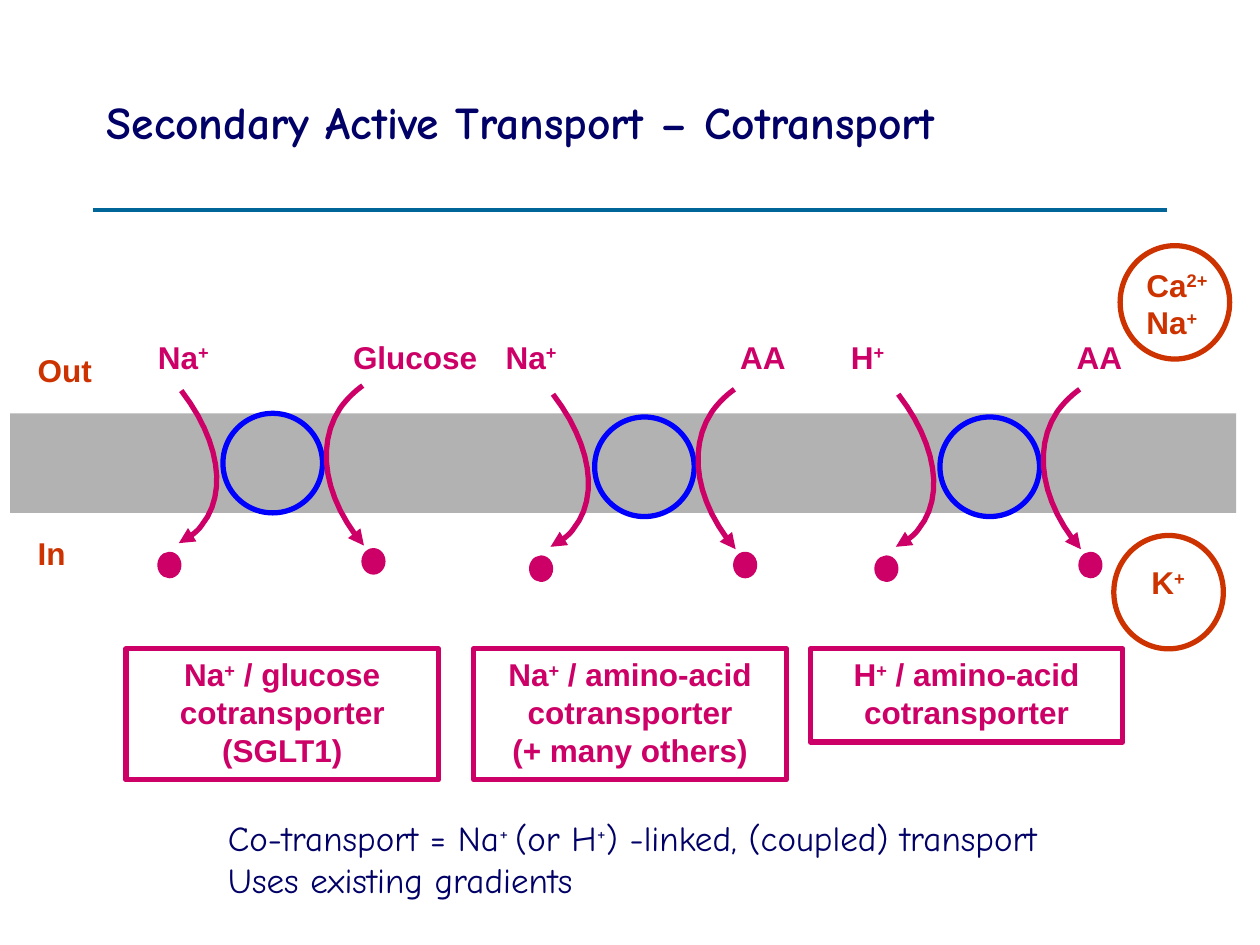
import pptx
import pptx.util
import pptx.dml.color
import pptx.enum.shapes
import pptx.enum.text
import pptx.oxml
import pptx.oxml.ns

Pt = pptx.util.Pt
RGBColor = pptx.dml.color.RGBColor
SHAPE = pptx.enum.shapes.MSO_SHAPE
ALIGN = pptx.enum.text.PP_ALIGN
ANCHOR = pptx.enum.text.MSO_ANCHOR

NAVY = RGBColor(0x00, 0x00, 0x66)
TEAL = RGBColor(0x00, 0x66, 0x99)
GREY = RGBColor(0xB2, 0xB2, 0xB2)
BLUE = RGBColor(0x00, 0x00, 0xFF)
PINK = RGBColor(0xCC, 0x00, 0x66)
RUST = RGBColor(0xCC, 0x33, 0x00)

TITLE = "Secondary Active Transport – Cotransport"
SUMMARY = ["Co-transport = Na|+ |(or H|+|) -linked, (coupled) transport",
           "Uses existing gradients"]
SIDES = [("Out", 197.3), ("In", 301.7)]
TRANSPORTERS = [
    {"ion": "Na|+|", "solute": "Glucose", "caption": ["Na|+| / glucose cotransporter (SGLT1)"],
     "left": 72, "height": 74.9, "carrier": (127.4, 236.2)},
    {"ion": "Na|+|", "solute": "AA", "caption": ["Na|+| / amino-acid cotransporter", "(+ many others)"],
     "left": 270.7, "height": 74.9, "carrier": (339.8, 238.3)},
    {"ion": "H|+|", "solute": "AA", "caption": ["H|+| / amino-acid cotransporter"],
     "left": 463, "height": 53.3, "carrier": (537.1, 238.3)},
]
GRADIENTS = [
    {"ions": ["Ca|2+|", "Na|+|"], "text": (648, 148.3, 56.2, 50.4),
     "ring": (640.1, 140.4), "align": ALIGN.LEFT},
    {"ions": ["K|+|"], "text": (639.4, 318.2, 56.2, 28.8),
     "ring": (636.5, 306), "align": ALIGN.CENTER},
]
CARRIER_SIZE = 56.9
ION_PATH = [(-23.8, -13), (-2.2, 15.1), (2.9, 45.4), (-12.2, 64.1),
            (-15.1, 68.4), (-20.2, 71.3), (-25.2, 74.2)]
SOLUTE_PATH = [(79.9, -15.8), (74.9, -12.2), (70.6, -7.9), (67, -2.9),
               (52.6, 18.7), (58.3, 49.7), (80.6, 75.6)]
DOTS = [(-36, 80.6), (80.6, 78.5)]
CURVE_STEPS = 12


def write(shape, lines, color, size=18, face="Arial", bold=True,
          align=ALIGN.LEFT, anchor=ANCHOR.TOP):
    frame = shape.text_frame
    frame.word_wrap = True
    frame.vertical_anchor = anchor
    for index, line in enumerate(lines):
        para = frame.paragraphs[0] if index == 0 else frame.add_paragraph()
        para.alignment = align
        para.font.name, para.font.size = face, Pt(size)
        para.font.bold, para.font.color.rgb = bold, color
        for position, piece in enumerate(line.split("|")):
            if piece:
                span = para.add_run()
                span.text = piece
                if position % 2:
                    span._r.get_or_add_rPr().set("baseline", "30000")


def add_text(page, place, lines, color, **style):
    box = page.shapes.add_textbox(*map(Pt, place))
    write(box, lines, color, **style)


def paint(shape, fill=None, line=None):
    shape.shadow.inherit = False
    if fill is None:
        shape.fill.background()
    else:
        shape.fill.solid()
        shape.fill.fore_color.rgb = fill
    if line is None:
        shape.line.fill.background()
    else:
        shape.line.color.rgb = line
        shape.line.width = Pt(3)


def add_shape(page, kind, place, fill=None, line=None):
    shape = page.shapes.add_shape(kind, *map(Pt, place))
    paint(shape, fill, line)
    return shape


def bezier(p0, p1, p2, p3, t):
    s = 1 - t
    return tuple(s**3 * a + 3 * s * s * t * b + 3 * s * t * t * c + t**3 * d
                 for a, b, c, d in zip(p0, p1, p2, p3))


def add_arrow(page, origin, path):
    points = [path[0]]
    for start in range(0, len(path) - 1, 3):
        points += [bezier(*path[start:start + 4], step / CURVE_STEPS)
                   for step in range(1, CURVE_STEPS + 1)]
    points = [(Pt(origin[0] + x), Pt(origin[1] + y)) for x, y in points]
    builder = page.shapes.build_freeform(*points[0])
    builder.add_line_segments(points[1:], close=False)
    arrow = builder.convert_to_shape()
    paint(arrow, line=PINK)
    arrow.line._get_or_add_ln().append(pptx.oxml.parse_xml(
        '<a:tailEnd %s type="triangle"/>' % pptx.oxml.ns.nsdecls("a")))


def add_transporter(page, item):
    left, (x, y) = item["left"], item["carrier"]
    caption = add_shape(page, SHAPE.RECTANGLE, (left, 370.8, 178.6, item["height"]), line=PINK)
    write(caption, item["caption"], PINK, align=ALIGN.CENTER)
    add_text(page, (left + 6.5, 189.4, 52.6, 28.8), [item["ion"]], PINK, align=ALIGN.CENTER)
    add_text(page, (left + 100.1, 189.4, 130.3, 28.8), [item["solute"]], PINK, align=ALIGN.CENTER)
    add_shape(page, SHAPE.OVAL, (x, y, CARRIER_SIZE, CARRIER_SIZE), GREY, BLUE)
    for path in (ION_PATH, SOLUTE_PATH):
        add_arrow(page, (x, y), path)
    for dx, dy in DOTS:
        add_shape(page, SHAPE.OVAL, (x + dx, y + dy, 10.8, 12.2), PINK, PINK)


def main():
    deck = pptx.Presentation()
    deck.slide_width, deck.slide_height = Pt(720), Pt(540)
    page = deck.slides.add_slide(deck.slide_layouts[6])

    rule = page.shapes.add_connector(pptx.enum.shapes.MSO_CONNECTOR.STRAIGHT,
                                     Pt(53.3), Pt(120.2), Pt(666.7), Pt(120.2))
    rule.line.color.rgb = TEAL
    rule.line.width = Pt(2.25)
    rule._element.spPr.append(pptx.oxml.parse_xml(
        "<a:effectLst %s/>" % pptx.oxml.ns.nsdecls("a")))
    add_text(page, (54, 18, 612, 102.2), [TITLE], NAVY, size=26,
             face="Comic Neue", anchor=ANCHOR.MIDDLE)

    add_shape(page, SHAPE.RECTANGLE, (5.8, 236.2, 700.6, 56.9), GREY)
    for label, top in SIDES:
        add_text(page, (14.4, top, 75.6, 28.8), [label], RUST)
    for item in TRANSPORTERS:
        add_transporter(page, item)
    add_text(page, (123.1, 463, 560.2, 55.4), SUMMARY, NAVY, size=20,
             face="Comic Neue", bold=False)
    for item in GRADIENTS:
        add_text(page, item["text"], item["ions"], RUST, align=item["align"])
        add_shape(page, SHAPE.OVAL, (*item["ring"], 62.6, 64.8), line=RUST)

    deck.save("out.pptx")


if __name__ == "__main__":
    main()
